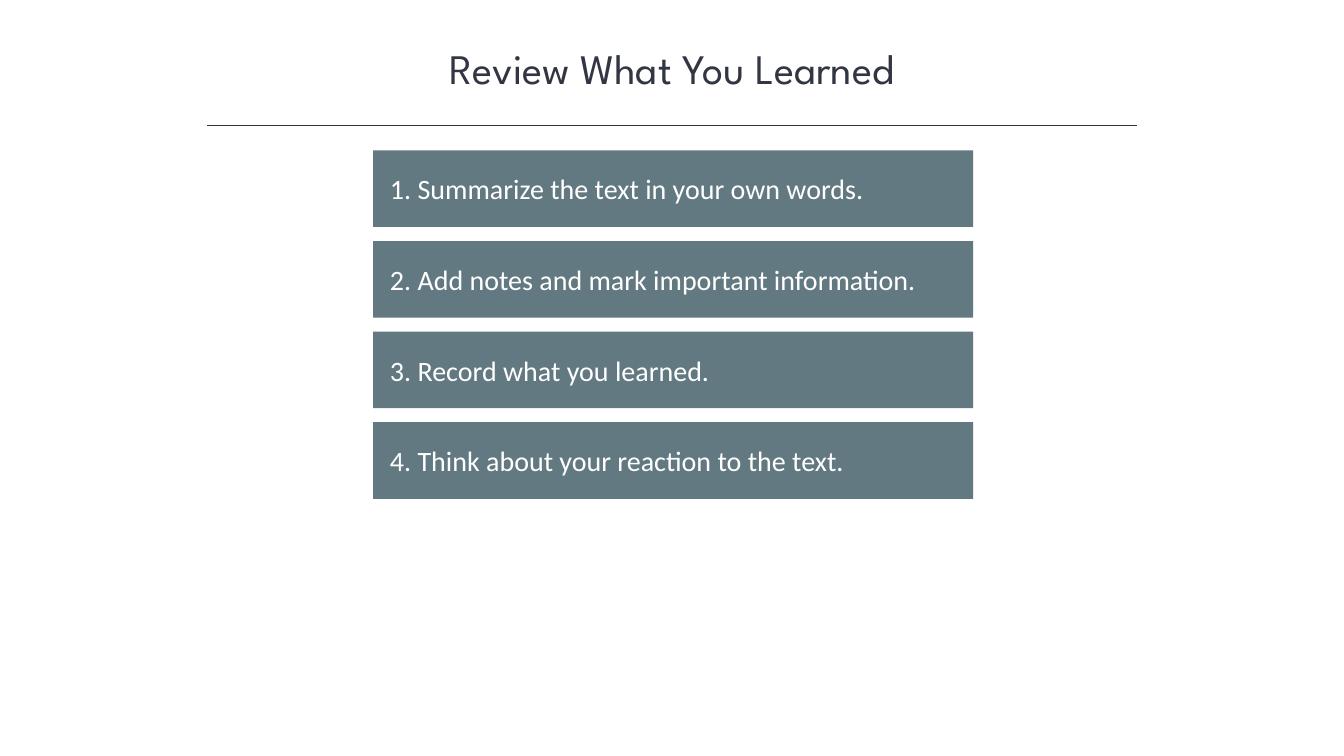
from pptx import Presentation
from pptx.dml.color import RGBColor
from pptx.enum.shapes import MSO_CONNECTOR as Connector, MSO_SHAPE as Shape
from pptx.enum.text import MSO_ANCHOR as Anchor, PP_ALIGN as Align
from pptx.oxml.ns import qn
from pptx.util import Pt
from lxml.etree import SubElement

# Content
TITLE = "Review What You Learned"
STEPS = [
    "Summarize the text in your own words.",
    "Add notes and mark important information.",
    "Record what you learned.",
    "Think about your reaction to the text.",
]
INK, SLATE, WHITE = "323542", "627981", "FFFFFF"

# Layout, in points
PAGE_WIDTH, PAGE_HEIGHT = 960, 540
TITLE_BOX = (120, 26.6, 720, 44)
RULE_LEFT, RULE_RIGHT, RULE_TOP = 148, 812, 89.5
BAR_LEFT, BAR_TOP, BAR_WIDTH, BAR_HEIGHT = 266.6, 107.5, 428.6, 54.7
BAR_PITCH = 64.7


def color(value):
    return RGBColor.from_string(value)


def write(box, text, font, size, ink, align=Align.LEFT, inset=7.2):
    frame = box.text_frame
    frame.word_wrap = True
    frame.vertical_anchor = Anchor.MIDDLE
    frame.margin_left = frame.margin_right = Pt(inset)
    frame.margin_top = frame.margin_bottom = Pt(3.6)
    para = frame.paragraphs[0]
    para.alignment = align
    para.space_before = Pt(0)
    para.line_spacing = 1.0
    span = para.add_run()
    span.text = text
    span.font.name = font
    span.font.size = Pt(size)
    span.font.color.rgb = color(ink)


deck = Presentation()
deck.slide_width, deck.slide_height = Pt(PAGE_WIDTH), Pt(PAGE_HEIGHT)
page = deck.slides.add_slide(deck.slide_layouts[5])

# Title
title = page.shapes.title
title.left, title.top, title.width, title.height = map(Pt, TITLE_BOX)
write(title, TITLE, "League Spartan", 30, INK, Align.CENTER)

# Rule under the title
rule = page.shapes.add_connector(
    Connector.STRAIGHT, Pt(RULE_LEFT), Pt(RULE_TOP), Pt(RULE_RIGHT), Pt(RULE_TOP))
rule.line.color.rgb = color(INK)
rule.line.width = Pt(1)
SubElement(rule.element.spPr, qn("a:effectLst"))

# Numbered step bars
for index, step in enumerate(STEPS):
    bar = page.shapes.add_shape(
        Shape.RECTANGLE, Pt(BAR_LEFT), Pt(BAR_TOP + index * BAR_PITCH),
        Pt(BAR_WIDTH), Pt(BAR_HEIGHT))
    bar.shadow.inherit = False
    bar.fill.solid()
    bar.fill.fore_color.rgb = color(SLATE)
    bar.line.fill.background()
    write(bar, f"{index + 1}. {step}", "Calibri", 20, WHITE, inset=12)

deck.save("out.pptx")
